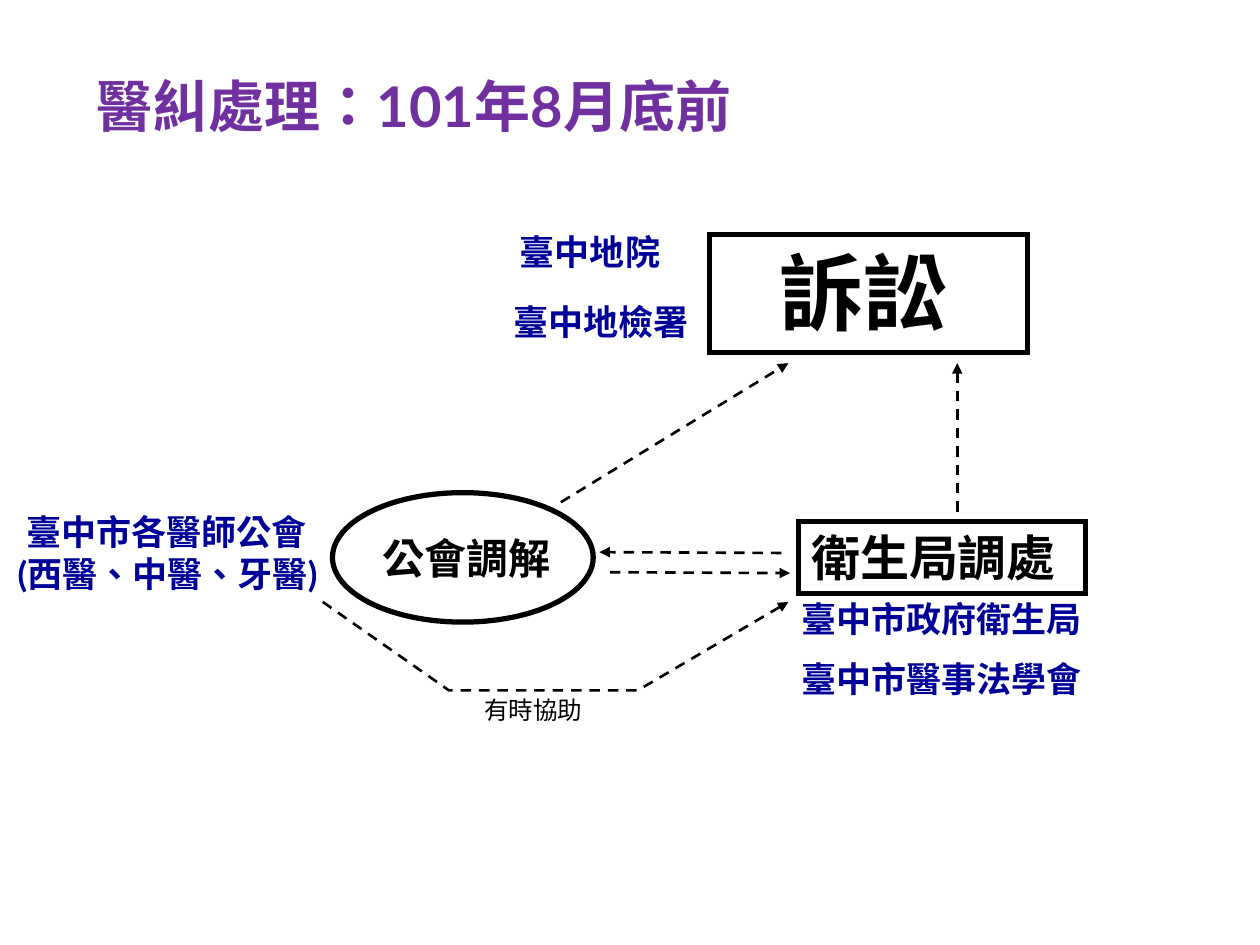
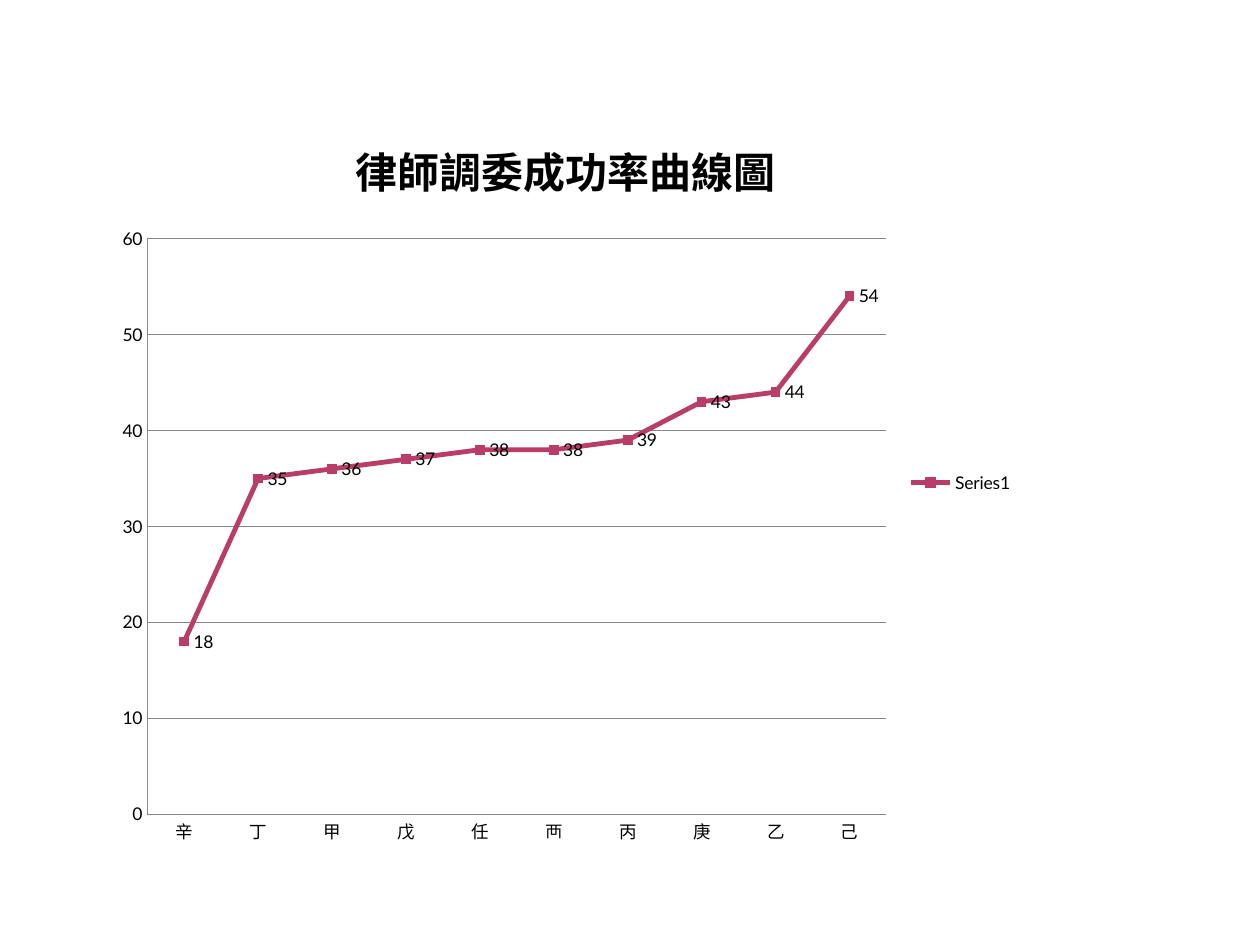
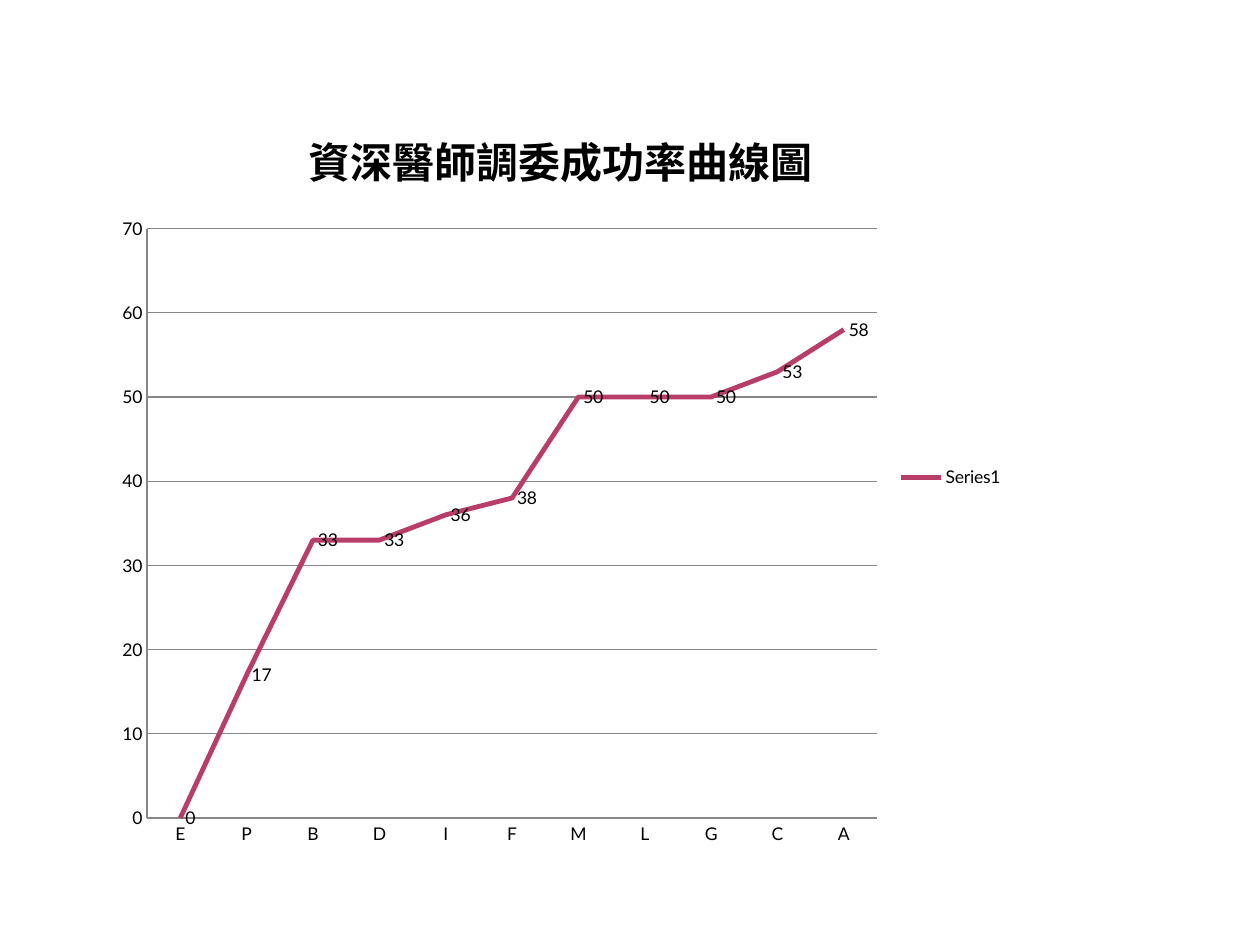
from dataclasses import dataclass

from lxml.etree import SubElement
from pptx import Presentation
from pptx.chart.data import CategoryChartData
from pptx.dml.color import RGBColor
from pptx.enum.chart import (XL_CHART_TYPE, XL_LABEL_POSITION, XL_LEGEND_POSITION,
                             XL_MARKER_STYLE, XL_TICK_MARK)
from pptx.enum.dml import MSO_LINE
from pptx.enum.shapes import MSO_CONNECTOR, MSO_SHAPE
from pptx.enum.text import MSO_ANCHOR, MSO_AUTO_SIZE, PP_ALIGN
from pptx.oxml.ns import qn
from pptx.util import Pt


@dataclass(frozen=True)
class Theme:
    black: RGBColor = RGBColor(0x00, 0x00, 0x00)
    white: RGBColor = RGBColor(0xFF, 0xFF, 0xFF)
    navy: RGBColor = RGBColor(0x00, 0x00, 0x99)
    purple: RGBColor = RGBColor(0x70, 0x30, 0xA0)
    rose: RGBColor = RGBColor(0xB8, 0x3D, 0x68)
    grey: RGBColor = RGBColor(0x87, 0x87, 0x87)
    font: str = "Lato"
    chart_title_font: str = "Noto Sans CJK SC"
    title: int = 32
    lawsuit: int = 48
    bureau: int = 28
    guild: int = 24
    chart_title: int = 24
    label: int = 20
    note: int = 14
    axis: int = 10


theme = Theme()


def write_text(shape, text, size, color, bold=True, indent=0, wrap=False):
    frame = shape.text_frame
    frame.text = text
    frame.word_wrap = wrap
    frame.auto_size = MSO_AUTO_SIZE.NONE
    frame.vertical_anchor = MSO_ANCHOR.TOP
    paragraph = frame.paragraphs[0]
    paragraph.alignment = PP_ALIGN.LEFT
    if indent:
        paragraph._p.get_or_add_pPr().set("indent", str(Pt(indent)))
    for run in paragraph.runs:
        run.font.name = theme.font
        run.font.size = Pt(size)
        run.font.bold = bold
        run.font.color.rgb = color
        run.font._element.set("lang", "zh-TW")
        SubElement(run.font._element, qn("a:ea"), typeface=theme.font)


def draw_dashed_arrow(shape):
    shape.line.color.rgb = theme.black
    shape.line.width = Pt(1.5)
    shape.line.dash_style = MSO_LINE.DASH
    SubElement(shape.line._get_or_add_ln(), qn("a:tailEnd"), type="triangle")


prs = Presentation()
prs.slide_width, prs.slide_height = Pt(720), Pt(540)
title_only, blank = prs.slide_layouts[5], prs.slide_layouts[6]

# Slide 1: how disputes were handled
slide = prs.slides.add_slide(title_only)
heading = slide.shapes.title
heading.left, heading.top, heading.width, heading.height = Pt(48), Pt(37.5), Pt(381), Pt(46)
write_text(heading, "醫糾處理：101年8月底前", theme.title, theme.purple, wrap=True)

# Stages: outline, place, text, size, first-line indent
stages = [
    (MSO_SHAPE.RECTANGLE, (405.5, 134, 181.5, 67.5), "訴訟", theme.lawsuit, 33),
    (MSO_SHAPE.RECTANGLE, (456.5, 298, 164, 41), "衛生局調處", theme.bureau, 0),
    (MSO_SHAPE.OVAL, (190, 281.5, 149, 74), "公會調解", theme.guild, 0),
]
for outline, place, text, size, indent in stages:
    stage = slide.shapes.add_shape(outline, *map(Pt, place))
    stage.shadow.inherit = False
    stage.fill.solid()
    stage.fill.fore_color.rgb = theme.white
    stage.line.color.rgb = theme.black
    stage.line.width = Pt(3)
    SubElement(stage.line._get_or_add_ln(), qn("a:miter"), lim="800000")
    write_text(stage, text, size, theme.black, indent=indent, wrap=True)
    if outline == MSO_SHAPE.OVAL:
        label = stage.text_frame
        label.margin_left, label.margin_right = Pt(4), Pt(0)
        label.vertical_anchor = MSO_ANCHOR.MIDDLE
        label.paragraphs[0].alignment = PP_ALIGN.CENTER

# Bodies in charge of each stage
bodies = [
    ((281, 128, 122, 32), "臺中地院", 9, False),
    ((286.5, 168, 114.5, 31), "臺中地檢署", 0, False),
    ((3, 288, 189, 55.5), "臺中市各醫師公會\v(西醫、中醫、牙醫)", 5, True),
    ((451, 338, 174, 31), "臺中市政府衛生局", 0, False),
    ((451, 372, 174, 31), "臺中市醫事法學會", 0, False),
]
for place, text, indent, wrap in bodies:
    body = slide.shapes.add_textbox(*map(Pt, place))
    write_text(body, text, theme.label, theme.navy, indent=indent, wrap=wrap)

# Routes between the stages
routes = [
    (446.5, 316, 342.5, 315.5),
    (348.5, 327, 451.5, 327.5),
    (547, 292.5, 547, 207.5),
    (320.5, 287, 450.5, 207.5),
]
for route in routes:
    arrow = slide.shapes.add_connector(MSO_CONNECTOR.STRAIGHT, *map(Pt, route))
    draw_dashed_arrow(arrow)
    SubElement(arrow._element.spPr, qn("a:effectLst"))

# Occasional assistance
builder = slide.shapes.build_freeform(Pt(184.5), Pt(344))
builder.add_line_segments([(Pt(x), Pt(y)) for x, y in
                           [(256.5, 394.5), (364.5, 394.5), (450.5, 344)]], close=False)
assistance = builder.convert_to_shape()
assistance.fill.background()
draw_dashed_arrow(assistance)
assistance.shadow.inherit = False
assistance_note = slide.shapes.add_textbox(Pt(269.5), Pt(393.5), Pt(70.5), Pt(24))
write_text(assistance_note, "有時協助", theme.note, theme.black, bold=False)

# Slides 2 and 3: success rates of the mediators
success_rates = [
    ("律師調委成功率曲線圖", XL_CHART_TYPE.LINE_MARKERS_STACKED, (59.5, 60.5, 527, 430.5), 60,
     "辛丁甲戊任襾丙庚乙己", [18, 35, 36, 37, 38, 38, 39, 43, 44, 54]),
    ("資深醫師調委成功率曲線圖", XL_CHART_TYPE.LINE_STACKED, (59.5, 54.5, 521.5, 436.5), 70,
     "EPBDIFMLGCA", [0, 17, 33, 33, 36, 38, 50, 50, 50, 53, 58]),
]
for chart_title, kind, place, top_rate, mediators, rates in success_rates:
    slide = prs.slides.add_slide(blank)
    rate_data = CategoryChartData()
    rate_data.categories = list(mediators)
    rate_data.add_series("Series1", rates)
    chart = slide.shapes.add_chart(kind, *map(Pt, place), rate_data).chart
    chart.font.name = theme.font
    chart.font.size = Pt(theme.axis)
    chart.font.color.rgb = theme.black

    chart.has_title = True
    chart.chart_title.include_in_layout = False
    chart.chart_title.text_frame.text = chart_title
    title_font = chart.chart_title.text_frame.paragraphs[0].runs[0].font
    title_font.name = theme.chart_title_font
    title_font.size = Pt(theme.chart_title)
    title_font.bold = True
    title_font.color.rgb = theme.black

    chart.has_legend = True
    chart.legend.position = XL_LEGEND_POSITION.RIGHT
    chart.legend.include_in_layout = False

    rate_axis = chart.value_axis
    rate_axis.minimum_scale, rate_axis.maximum_scale, rate_axis.major_unit = 0, top_rate, 10
    rate_axis.has_major_gridlines = True
    for axis in (chart.category_axis, rate_axis):
        axis.major_tick_mark = axis.minor_tick_mark = XL_TICK_MARK.NONE
    for rule in (chart.category_axis, rate_axis, rate_axis.major_gridlines):
        rule.format.line.color.rgb = theme.grey
        rule.format.line.width = Pt(0.75)

    plot = chart.plots[0]
    plot.vary_by_categories = False
    plot.has_data_labels = True
    plot.data_labels.show_value = True
    plot.data_labels.position = XL_LABEL_POSITION.RIGHT
    curve = plot.series[0]
    curve.smooth = False
    curve.format.line.color.rgb = theme.rose
    curve.format.line.width = Pt(2.75)
    if kind == XL_CHART_TYPE.LINE_MARKERS_STACKED:
        curve.marker.style = XL_MARKER_STYLE.SQUARE
        curve.marker.size = 5
        curve.marker.format.fill.solid()
        curve.marker.format.fill.fore_color.rgb = theme.rose
        curve.marker.format.line.color.rgb = theme.rose

prs.save("out.pptx")
